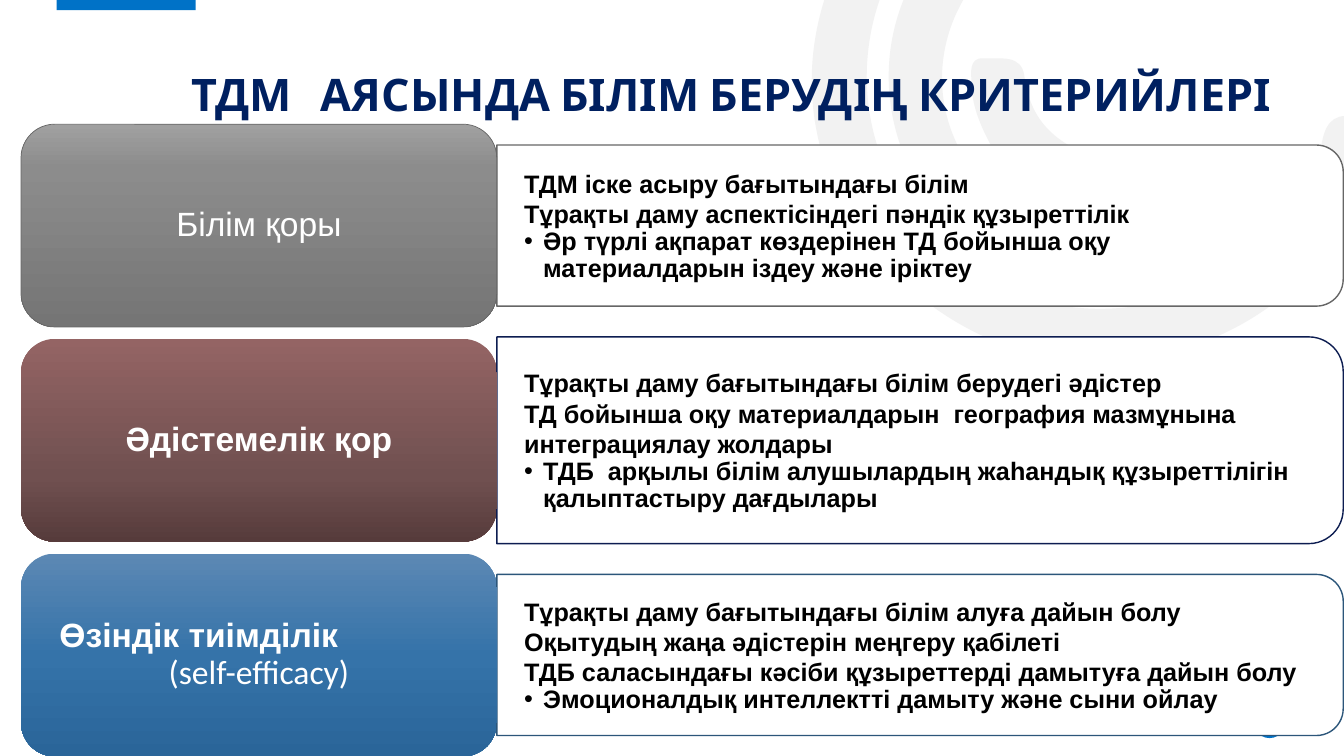
import copy
import math
from lxml import etree
from pptx import Presentation
from pptx import util as u
from pptx.dml.color import RGBColor
from pptx.enum import shapes, text
from pptx.oxml.ns import qn

COLORS = {
    "arc": "F2F2F2", "accent": "0072C7", "title": "002060",
    "white": "FFFFFF", "black": "000000", "gray": "666666",
}

deck = Presentation()
deck.slide_width, deck.slide_height = u.Cm(33.87), u.Cm(19.05)
slide = deck.slides.add_slide(deck.slide_layouts[6])


def write(frame, content, size=18, color="black", bold=True, font="Arial", align="LEFT",
          spacing=0.9, margin=0, bullet=False, join=False, tracking=0):
    paragraph = frame.paragraphs[-1]
    if paragraph.runs and not join:
        paragraph = frame.add_paragraph()
    properties = paragraph._p.get_or_add_pPr()
    properties.set("marL", str(u.Cm(margin)))
    properties.set("indent", str(-u.Cm(margin) if bullet else 0))
    if bullet:
        etree.SubElement(properties, qn("a:buFont")).set("typeface", font)
        etree.SubElement(properties, qn("a:buChar")).set("char", "•")
    paragraph.alignment = getattr(text.PP_ALIGN, align)
    paragraph.line_spacing = spacing
    run = paragraph.add_run()
    run.text = content
    run.font.size, run.font.bold, run.font.name = u.Pt(size), bold, font
    run.font.color.rgb = RGBColor.from_string(COLORS[color])
    if tracking:
        run._r.get_or_add_rPr().set("spc", str(tracking))


def paint(shape, fill, line=None, width=1):
    shape.shadow.inherit = False
    if isinstance(fill, str):
        shape.fill.solid()
        shape.fill.fore_color.rgb = RGBColor.from_string(fill)
    else:
        shape.fill.gradient()
        shape.fill.gradient_angle = 270
        stops = shape._element.spPr.find(".//" + qn("a:gsLst"))
        stops.insert(1, copy.deepcopy(stops[0]))
        for stop, (position, color) in zip(shape.fill.gradient_stops, fill):
            stop.position = position
            stop.color.rgb = RGBColor.from_string(color)
    if line:
        shape.line.color.rgb = RGBColor.from_string(line)
        shape.line.width = u.Pt(width)
    else:
        shape.line.fill.background()


ARCS = [
    [(851, 229), (799, 149), (787, 50), (838, -50), (890, -152), (976, -203), (1090, -207),
     (1105, -207), (1121, -210), (1131, -195), (1144, -175), (1127, -154), (1098, -154),
     (967, -154), (865, -59), (860, 68), (856, 181), (936, 281), (1046, 302),
     (1160, 324), (1270, 261), (1307, 152), (1309, 148), (1311, 144), (1312, 140),
     (1316, 119), (1327, 111), (1349, 117), (1373, 124), (1367, 141), (1361, 156),
     (1334, 245), (1278, 307), (1191, 341), (1070, 387), (936, 345), (851, 229)],
    [(922, 199), (862, 115), (869, 7), (940, -68), (951, -79), (962, -95), (980, -78),
     (995, -64), (997, -50), (979, -32), (925, 26), (920, 108), (965, 168),
     (1008, 229), (1088, 249), (1161, 215), (1182, 205), (1193, 212), (1203, 229),
     (1213, 250), (1197, 256), (1183, 263), (1096, 310), (983, 282), (922, 199)],
    [(987, 151), (975, 130), (964, 107), (964, 82), (964, 73), (961, 57), (976, 58),
     (992, 59), (1013, 53), (1016, 76), (1021, 110), (1036, 132), (1067, 148),
     (1088, 157), (1076, 176), (1072, 189), (1068, 206), (1055, 198), (1045, 194),
     (1021, 187), (1003, 170), (987, 151)],
]
ARC_ANGLE = 144.2
turn = complex(math.cos(math.radians(ARC_ANGLE)), math.sin(math.radians(ARC_ANGLE)))
for points in ARCS:
    upright = [complex(x, y) * turn.conjugate() for x, y in points]
    outline = [(round(point.real), round(point.imag)) for point in upright]
    builder = slide.shapes.build_freeform(*outline[0], scale=u.Cm(0.0254))
    builder.add_line_segments(outline[1:], close=True)
    arc = builder.convert_to_shape()
    segments = arc._element.findall(".//" + qn("a:lnTo"))
    for k in range(0, len(points) - 1, 3):
        curve = etree.Element(qn("a:cubicBezTo"))
        segments[k].addprevious(curve)
        for segment in segments[k:k + 3]:
            curve.append(segment[0])
            segment.getparent().remove(segment)
    center = complex(arc.left + arc.width / 2, arc.top + arc.height / 2) * turn
    arc.left = round(center.real - arc.width / 2)
    arc.top = round(center.imag - arc.height / 2)
    arc.rotation = ARC_ANGLE
    paint(arc, COLORS["arc"])

for preset, left, top, width, height in [
    (shapes.MSO_SHAPE.RECTANGLE, 1.43, -0.05, 3.5, 0.31),
    (shapes.MSO_SHAPE.OVAL, 31.6, 17.81, 0.79, 0.79),
]:
    accent = slide.shapes.add_shape(preset, u.Cm(left), u.Cm(top), u.Cm(width), u.Cm(height))
    paint(accent, COLORS["accent"])

title = slide.shapes.add_textbox(u.Cm(2.54), u.Cm(1.66), u.Cm(31.8), u.Cm(1.4)).text_frame
title.word_wrap = True
title.vertical_anchor = text.MSO_ANCHOR.BOTTOM
title.margin_left = title.margin_right = title.margin_top = title.margin_bottom = 0
for part, tracking in [("ТДМ", 0), (" ", 1370), ("АЯСЫНДА БІЛІМ БЕРУДІҢ КРИТЕРИЙЛЕРІ", 0)]:
    write(title, part, size=32, color="title", font="Cabin", align="CENTER",
          join=True, tracking=tracking)

heading = dict(size=24, color="white", align="CENTER")
CRITERIA = [
    ([("Білім қоры", dict(heading, bold=False))],
     [(0, "A0A0A0"), (0.22, "8C8C8C"), (1, "757575")], COLORS["gray"], COLORS["gray"], 4.06,
     ["ТДМ іске асыру бағытындағы білім",
      "Тұрақты даму аспектісіндегі пәндік құзыреттілік",
      "Әр түрлі ақпарат көздерінен ТД бойынша оқу материалдарын іздеу және іріктеу"]),
    ([("Әдістемелік қор", heading)],
     [(0, "946464"), (0.68, "705050"), (1, "563B3B")], None, "0D1D51", 5.21,
     ["Тұрақты даму бағытындағы білім берудегі әдістер",
      "ТД бойынша оқу материалдарын  география мазмұнына интеграциялау жолдары",
      "ТДБ  арқылы білім алушылардың жаһандық құзыреттілігін қалыптастыру дағдылары"]),
    ([("Өзіндік тиімділік", dict(heading, align="LEFT", margin=0.47)),
      ("(self-efficacy)", dict(heading, bold=False, font="Calibri"))],
     [(0, "5C88B4"), (0.5, "3573A9"), (1, "2A6599")], None, "2C567A", 4.06,
     ["Тұрақты даму бағытындағы білім алуға дайын болу",
      "Оқытудың жаңа әдістерін меңгеру қабілеті",
      "ТДБ саласындағы кәсіби құзыреттерді дамытуға дайын болу",
      "Эмоционалдық интеллектті дамыту және сыни ойлау"]),
]
CARD_LEFT, CARD_TOP, CARD_WIDTH, CARD_HEIGHT, PITCH = 0.53, 3.13, 11.99, 5.11, 5.41
PANEL_LEFT, PANEL_LENGTH = CARD_LEFT + CARD_WIDTH, 21.33

for row, (names, shades, card_line, panel_line, depth, skills) in enumerate(CRITERIA):
    top = CARD_TOP + row * PITCH
    middle = top + CARD_HEIGHT / 2

    panel = slide.shapes.add_shape(
        shapes.MSO_SHAPE.ROUND_2_SAME_RECTANGLE,
        u.Cm(PANEL_LEFT + (PANEL_LENGTH - depth) / 2), u.Cm(middle - PANEL_LENGTH / 2),
        u.Cm(depth), u.Cm(PANEL_LENGTH))
    panel.rotation = 90
    paint(panel, COLORS["white"], panel_line)

    details = slide.shapes.add_textbox(u.Cm(PANEL_LEFT), u.Cm(middle - depth / 2 + 0.2),
                                       u.Cm(21.13), u.Cm(depth - 0.4)).text_frame
    details.word_wrap = True
    details.vertical_anchor = text.MSO_ANCHOR.MIDDLE
    details.margin_left = details.margin_right = u.Cm(0.69)
    details.margin_top = details.margin_bottom = u.Cm(0.36)
    for skill in skills[:-1]:
        write(details, skill, spacing=1.0)
    write(details, skills[-1], margin=0.48, bullet=True)

    card = slide.shapes.add_shape(shapes.MSO_SHAPE.ROUNDED_RECTANGLE, u.Cm(CARD_LEFT),
                                  u.Cm(top), u.Cm(CARD_WIDTH), u.Cm(CARD_HEIGHT))
    paint(card, shades, card_line, 0.5)
    card.text_frame.word_wrap = True
    card.text_frame.vertical_anchor = text.MSO_ANCHOR.MIDDLE
    for name, style in names:
        write(card.text_frame, name, **style)

deck.save("out.pptx")
